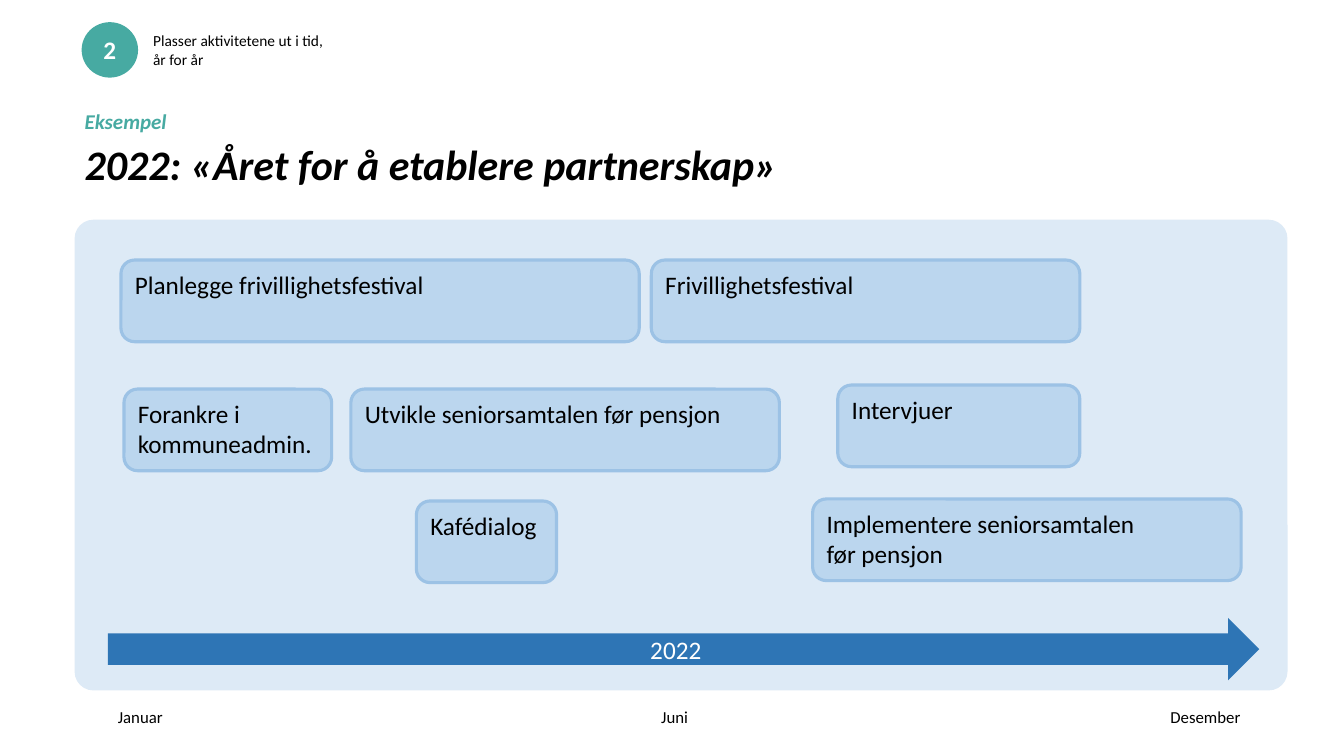
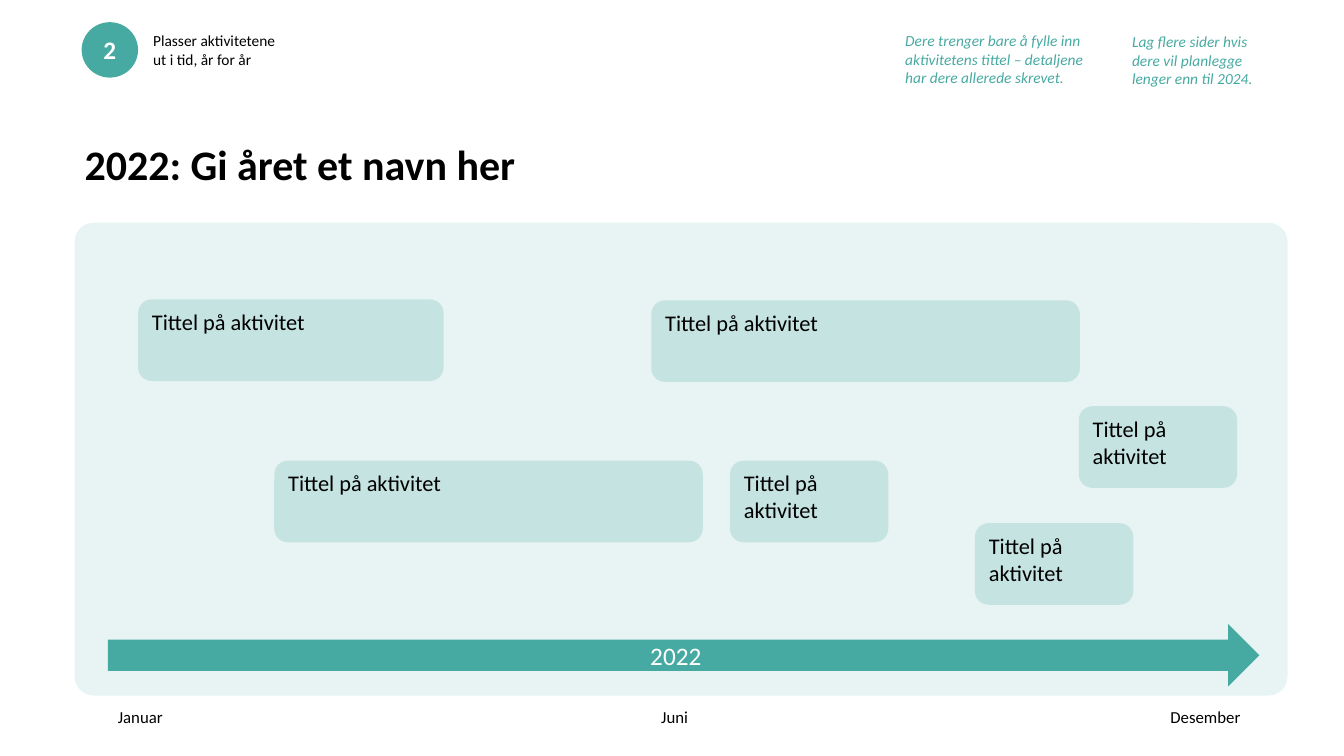
import copy

import pptx
import pptx.dml.color
import pptx.enum.shapes
import pptx.enum.text
import pptx.oxml.ns
import pptx.util
from lxml import etree

Inches = pptx.util.Inches
RGBColor = pptx.dml.color.RGBColor
SHAPE = pptx.enum.shapes.MSO_SHAPE
ANCHOR = pptx.enum.text.MSO_ANCHOR
ALIGN = pptx.enum.text.PP_ALIGN
FIT = pptx.enum.text.MSO_AUTO_SIZE
qn = pptx.oxml.ns.qn

FONT = "Calibri"
BLACK = RGBColor(0x00, 0x00, 0x00)
WHITE = RGBColor(0xFF, 0xFF, 0xFF)
TEAL = RGBColor(0x47, 0xAA, 0xA2)
BLUE = RGBColor(0x2E, 0x75, 0xB5)
PANEL_BLUE = RGBColor(0xDD, 0xEA, 0xF6)
BAR_BLUE = RGBColor(0xBB, 0xD6, 0xEE)
EDGE_BLUE = RGBColor(0x9C, 0xC2, 0xE5)

BAR_HEIGHT = 0.81
MONTHS = [("Januar", 1.07), ("Juni", 6.46), ("Desember", 11.51)]
TITLE_HINT = "Tittel på aktivitet"


def write(sp, text, size, color=BLACK, bold=False, italic=False,
          align=None, anchor=ANCHOR.TOP, spacing=None, inset=0.05, grow=False):
    """Fill a shape with text: newline starts a paragraph, \\v breaks a line."""
    tf = sp.text_frame
    tf.word_wrap = True
    tf.auto_size = FIT.SHAPE_TO_FIT_TEXT if grow else FIT.NONE
    tf.vertical_anchor = anchor
    tf.margin_left = tf.margin_right = Inches(0.1)
    tf.margin_top = tf.margin_bottom = Inches(inset)
    for i, line in enumerate(text.split("\n")):
        p = tf.add_paragraph() if i else tf.paragraphs[0]
        p.text = line
        p.alignment = align or ALIGN.LEFT
        if spacing:
            p.line_spacing = spacing
        for r in p.runs:
            r.font.name, r.font.size = FONT, pptx.util.Pt(size)
            r.font.bold, r.font.italic = bold, italic
            r.font.color.rgb = color
        # Line breaks take the format of the text around them
        for br in p._p.findall(qn("a:br")):
            br.append(copy.deepcopy(p.runs[0]._r.rPr))


def add_block(s, kind, box, fill, alpha=None, edge=None):
    sp = s.shapes.add_shape(kind, *map(Inches, box))
    sp.shadow.inherit = False
    sp.fill.solid()
    sp.fill.fore_color.rgb = fill
    if alpha:
        clr = sp.fill._xPr.find(qn("a:solidFill"))[0]
        etree.SubElement(clr, qn("a:alpha"), val=str(alpha * 1000))
    if edge:
        sp.line.color.rgb = edge
        sp.line.width = pptx.util.Pt(2.25)
    else:
        sp.line.fill.background()
    return sp


# What differs between the two year plans; bars are (text, left, top, width)
plans = [
    dict(
        title="2022: «Året for å etablere partnerskap»", italic=True, title_width=8.02,
        step="Plasser aktivitetene ut i tid,\når for år", step_width=2.2,
        panel=(2.18, 4.67), panel_fill=dict(fill=PANEL_BLUE),
        arrow_top=6.13, arrow_color=BLUE,
        bar_fill=dict(fill=BAR_BLUE, edge=EDGE_BLUE), bar_size=18,
        bars=[
            ("Planlegge frivillighetsfestival", 1.2, 2.58, 5.14),
            ("Frivillighetsfestival", 6.46, 2.58, 4.25),
            ("Forankre i kommuneadmin.", 1.23, 3.86, 2.06),
            ("Utvikle seniorsamtalen før pensjon", 3.48, 3.86, 4.25),
            ("Intervjuer", 8.31, 3.82, 2.4),
            ("Kafédialog", 4.13, 4.97, 1.39),
            ("Implementere seniorsamtalen\vfør pensjon", 8.06, 4.95, 4.25),
        ],
        notes=[("Eksempel", (0.74, 1.03, 3.78, 0.35), dict(size=15, bold=True))],
    ),
    dict(
        title="2022: Gi året et navn her", italic=False, title_width=7,
        step="Plasser aktivitetene ut i tid, år for år", step_width=1.53,
        panel=(2.21, 4.69), panel_fill=dict(fill=TEAL, alpha=12),
        arrow_top=6.19, arrow_color=TEAL,
        bar_fill=dict(fill=TEAL, alpha=22), bar_size=16,
        bars=[
            (TITLE_HINT, 1.37, 2.97, 3.03),
            (TITLE_HINT, 6.46, 2.98, 4.25),
            (TITLE_HINT, 2.72, 4.57, 4.25),
            (TITLE_HINT, 7.24, 4.57, 1.57),
            (TITLE_HINT, 10.7, 4.03, 1.57),
            (TITLE_HINT, 9.67, 5.19, 1.57),
        ],
        notes=[
            ("Dere trenger bare å fylle inn aktivitetens tittel – detaljene\v"
             "har dere allerede skrevet.", (8.88, 0.26, 2.35, 0.66), dict(size=11)),
            ("Lag flere sider hvis dere vil planlegge lenger enn til 2024.",
             (11.13, 0.27, 1.63, 0.66), dict(size=11)),
        ],
    ),
]

prs = pptx.Presentation()
prs.slide_width, prs.slide_height = Inches(13.33), Inches(7.5)

for plan in plans:
    s = prs.slides.add_slide(prs.slide_layouts[6])

    # Title
    sp = s.shapes.add_textbox(*map(Inches, (0.74, 0.6, plan["title_width"], 1.33)))
    write(sp, plan["title"], 30, bold=True, italic=plan["italic"],
          anchor=ANCHOR.BOTTOM, spacing=0.9)

    # Panel and year arrow
    top, height = plan["panel"]
    sp = add_block(s, SHAPE.ROUNDED_RECTANGLE, (0.74, top, 12.03, height),
                   **plan["panel_fill"])
    sp.adjustments[0] = 0.04
    sp = add_block(s, SHAPE.RIGHT_ARROW, (1.07, plan["arrow_top"], 11.42, 0.62),
                   plan["arrow_color"])
    write(sp, "2022", 18, WHITE, align=ALIGN.CENTER, anchor=ANCHOR.MIDDLE)

    # Activities
    for text, left, top, width in plan["bars"]:
        sp = add_block(s, SHAPE.ROUNDED_RECTANGLE, (left, top, width, BAR_HEIGHT),
                       **plan["bar_fill"])
        write(sp, text, plan["bar_size"])

    # Months
    for month, left in MONTHS:
        sp = s.shapes.add_textbox(*map(Inches, (left, 6.96, 1.05, 0.3)))
        write(sp, month, 12, grow=True)

    # Step number and instruction
    sp = add_block(s, SHAPE.OVAL, (0.81, 0.22, 0.56, 0.55), TEAL)
    write(sp, "2", 18, WHITE, bold=True, align=ALIGN.CENTER, anchor=ANCHOR.MIDDLE)
    sp = s.shapes.add_textbox(*map(Inches, (1.42, 0.21, plan["step_width"], 0.57)))
    write(sp, plan["step"], 11, inset=0.1, grow=True)

    # Teal notes
    for text, box, style in plan["notes"]:
        sp = s.shapes.add_textbox(*map(Inches, box))
        write(sp, text, color=TEAL, italic=True, grow=True, **style)

prs.save("out.pptx")
